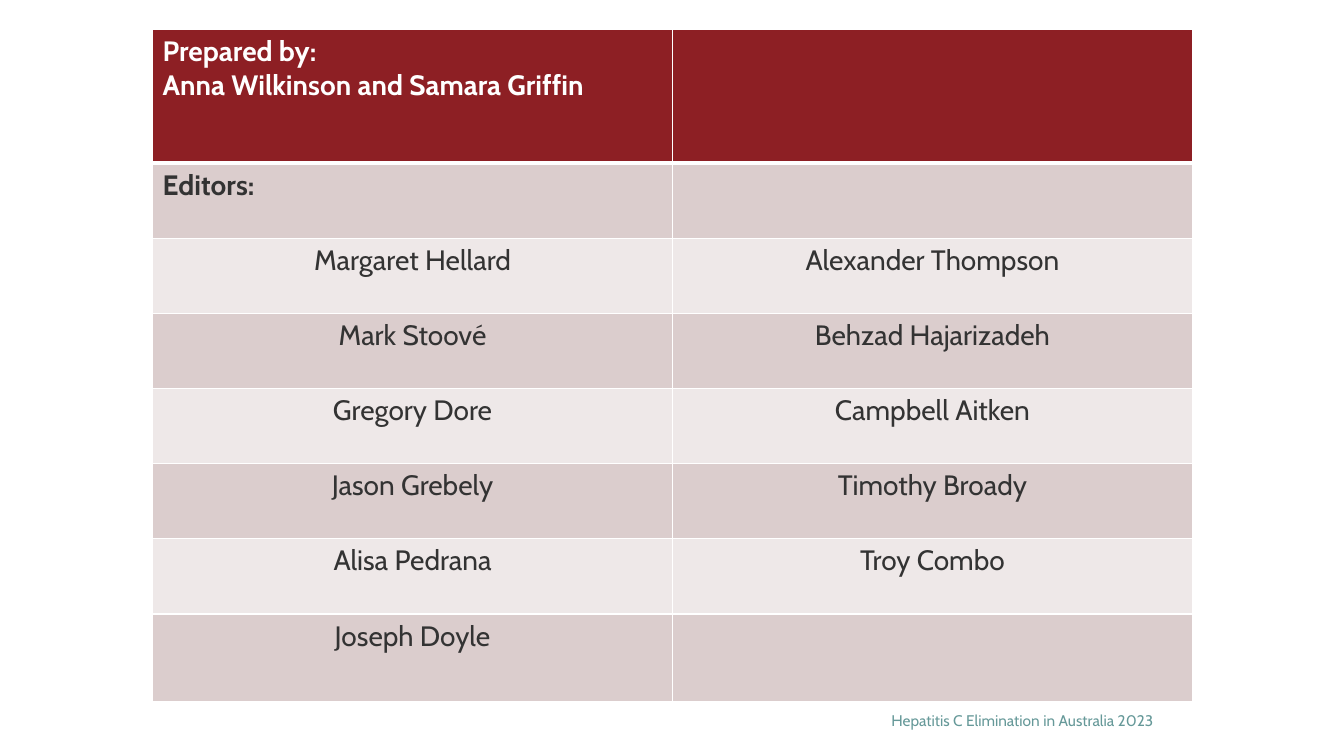
from lxml import etree
from pptx import Presentation
from pptx.dml.color import RGBColor
from pptx.enum.text import MSO_ANCHOR, PP_ALIGN
from pptx.oxml.ns import qn
from pptx.util import Pt

LEFT, CENTER = PP_ALIGN.LEFT, PP_ALIGN.CENTER
MIDDLE = MSO_ANCHOR.MIDDLE
BLANK_LAYOUT = 6

PREPARED_BY = ["Prepared by:", "Anna Wilkinson and Samara Griffin"]
EDITORS_LABEL = "Editors:"
EDITORS = [
    ("Margaret Hellard", "Alexander Thompson"),
    ("Mark Stoové", "Behzad Hajarizadeh"),
    ("Gregory Dore", "Campbell Aitken"),
    ("Jason Grebely", "Timothy Broady"),
    ("Alisa Pedrana", "Troy Combo"),
    ("Joseph Doyle", ""),
]
FOOTER = "Hepatitis C Elimination in Australia 2023"

FONT = "Cabin"
COLORS = {
    "header": "8D1F24",
    "dark_band": "DBCDCD",
    "light_band": "EEE8E8",
    "text": "333333",
    "white": "FFFFFF",
    "footer": "669999",
}
TABLE_LEFT, TABLE_TOP, COLUMN_WIDTH = 109, 20.8, 371.4
HEADER_HEIGHT, ROW_HEIGHT, LAST_HEIGHT = 95.6, 53.7, 62.3
FOOTER_BOX = (620.6, 500.4, 219.6, 28.8)


def write_text(frame, lines, size=20, color="text", bold=False, align=LEFT):
    for index, line in enumerate(lines):
        paragraph = frame.paragraphs[0] if index == 0 else frame.add_paragraph()
        paragraph.alignment = align
        paragraph.font.size = Pt(size)
        if line:
            run = paragraph.add_run()
            run.text = line
            run.font.name = FONT
            run.font.size = Pt(size)
            run.font.bold = bold
            run.font.color.rgb = RGBColor.from_string(COLORS[color])


def set_borders(cell, widths):
    properties = cell._tc.get_or_add_tcPr()
    for position, (side, width) in enumerate(widths.items()):
        line = etree.Element(qn(f"a:ln{side}"), w=str(Pt(width)))
        fill = etree.SubElement(line, qn("a:solidFill"))
        etree.SubElement(fill, qn("a:srgbClr"), val=COLORS["white"])
        properties.insert(position, line)


def add_credits_table(slide):
    rows = [(PREPARED_BY, [""]), ([EDITORS_LABEL], [""])]
    rows += [([left], [right]) for left, right in EDITORS]
    heights = [HEADER_HEIGHT] + [ROW_HEIGHT] * (len(rows) - 2) + [LAST_HEIGHT]
    table = slide.shapes.add_table(
        len(rows), 2, Pt(TABLE_LEFT), Pt(TABLE_TOP),
        Pt(2 * COLUMN_WIDTH), Pt(sum(heights))).table
    for column in table.columns:
        column.width = Pt(COLUMN_WIDTH)

    for row_index, row in enumerate(rows):
        table.rows[row_index].height = Pt(heights[row_index])
        is_header = row_index == 0
        is_label = row_index < 2
        band = "dark_band" if row_index % 2 else "light_band"
        for column_index, lines in enumerate(row):
            cell = table.cell(row_index, column_index)
            cell.fill.solid()
            cell.fill.fore_color.rgb = RGBColor.from_string(
                COLORS["header" if is_header else band])
            set_borders(cell, {"L": 1, "R": 1,
                               "T": 3 if row_index == 1 else 1,
                               "B": 3 if is_header else 1})
            write_text(cell.text_frame, lines, bold=is_label,
                       color="white" if is_header else "text",
                       align=LEFT if is_label else CENTER)


def add_footer(slide):
    frame = slide.shapes.add_textbox(*map(Pt, FOOTER_BOX)).text_frame
    frame.word_wrap = True
    frame.vertical_anchor = MIDDLE
    write_text(frame, [FOOTER], size=11, color="footer", align=CENTER)


def main():
    presentation = Presentation()
    presentation.slide_width, presentation.slide_height = Pt(960), Pt(540)
    slide = presentation.slides.add_slide(presentation.slide_layouts[BLANK_LAYOUT])
    add_footer(slide)
    add_credits_table(slide)
    presentation.save("out.pptx")


if __name__ == "__main__":
    main()
